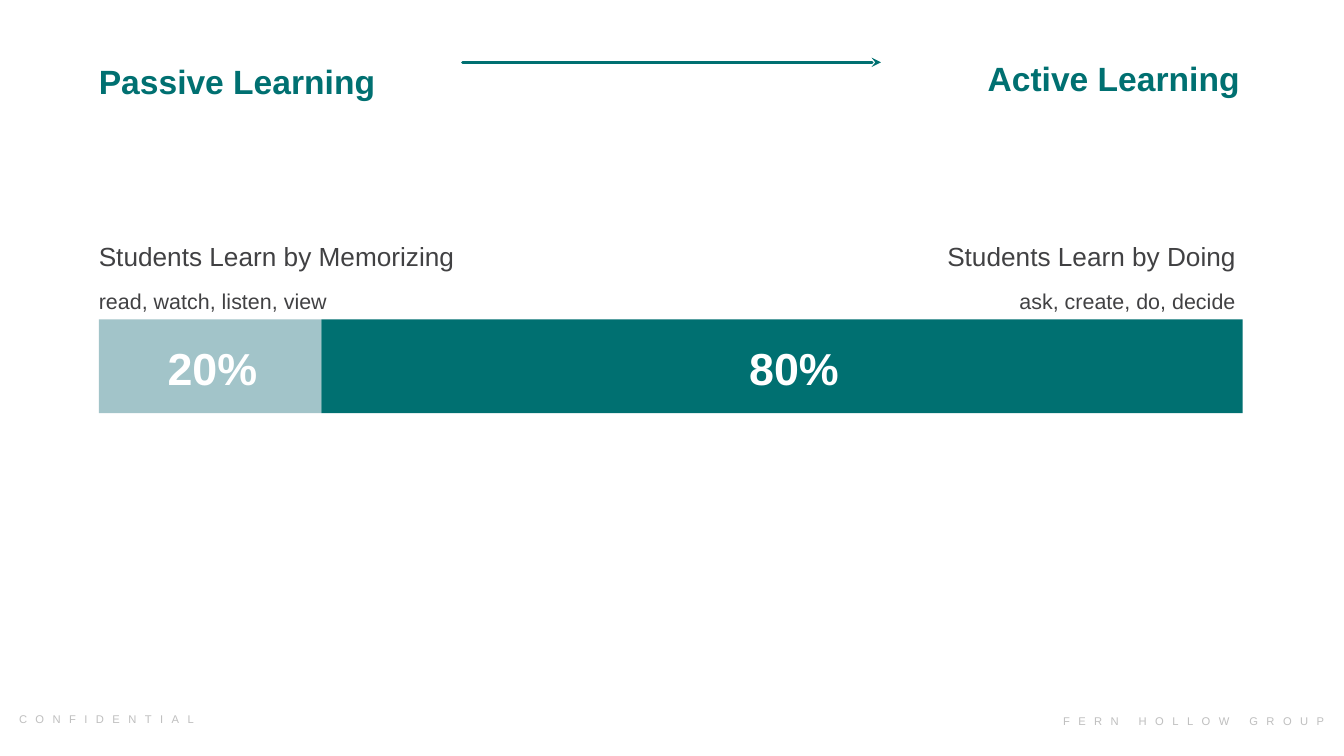
from lxml import etree
from pptx import Presentation
from pptx.dml.color import RGBColor
from pptx.enum.shapes import MSO_CONNECTOR, MSO_SHAPE
from pptx.enum.text import MSO_ANCHOR, PP_ALIGN
from pptx.oxml.ns import qn
from pptx.util import Cm, Pt

LEFT, CENTER, RIGHT = PP_ALIGN.LEFT, PP_ALIGN.CENTER, PP_ALIGN.RIGHT
TOP = MSO_ANCHOR.TOP
RECTANGLE = MSO_SHAPE.RECTANGLE
STRAIGHT = MSO_CONNECTOR.STRAIGHT

TEAL, PALE_TEAL = "007071", "A2C4C9"
INK, WHITE, GREY = "414143", "FFFFFF", "BFBFBF"
FONT = "Arial"
TITLE_ONLY = 5


def color(hex_code):
    return RGBColor.from_string(hex_code)


def place(shape, left, top, width, height):
    shape.left, shape.top = Cm(left), Cm(top)
    shape.width, shape.height = Cm(width), Cm(height)


def write(page, text, left, top, width, height, size, ink, bold=False,
          align=LEFT, spacing=1.0, tracking=0, inset=(0, 0), box=None):
    """Put one line of formatted text in a new box or a given placeholder."""
    if box is None:
        box = page.shapes.add_textbox(0, 0, 0, 0)
    place(box, left, top, width, height)
    frame = box.text_frame
    frame.word_wrap = True
    frame.vertical_anchor = TOP
    frame.margin_left = frame.margin_right = Cm(inset[0])
    frame.margin_top = frame.margin_bottom = Cm(inset[1])
    para = frame.paragraphs[0]
    para.alignment = align
    para.line_spacing = spacing
    para.space_before = Pt(0)
    span = para.add_run()
    span.text = text
    span.font.name, span.font.size = FONT, Pt(size)
    span.font.bold = bold
    span.font.color.rgb = color(ink)
    if tracking:
        span.font._element.set("spc", str(tracking * 100))


def add_arrow(page, left, top, width):
    arrow = page.shapes.add_connector(
        STRAIGHT, Cm(left), Cm(top), Cm(left + width), Cm(top))
    arrow.line.color.rgb = color(TEAL)
    arrow.line.width = Pt(2.25)
    line = arrow.line._get_or_add_ln()
    line.set("cap", "rnd")
    etree.SubElement(line, qn("a:tailEnd"), type="stealth")
    etree.SubElement(arrow._element.spPr, qn("a:effectLst"))


def add_headings(page, left, top, width):
    style = dict(size=24, ink=TEAL, bold=True, spacing=1.68)
    write(page, "Passive Learning", left, top + 0.08, 11.66, 1.73,
          box=page.shapes.title, **style)
    write(page, "Active Learning", left + width - 11.56, top, 11.56, 1.73,
          align=RIGHT, **style)
    add_arrow(page, left + 9.17, top + 0.81, 10.54)


def add_captions(page, left, top, width):
    rows = [
        ("Students Learn by Memorizing", "Students Learn by Doing", 0, 1.35, 18.7),
        ("read, watch, listen, view", "ask, create, do, decide", 1.3, 1.09, 15.3),
    ]
    half = width / 2
    for passive, active, offset, height, size in rows:
        for text, start, align in ((passive, left, LEFT),
                                   (active, left + half, RIGHT)):
            write(page, text, start, top + offset, half, height, size, INK,
                  align=align, spacing=1.68)


def add_share_bar(page, left, top, height):
    # Each segment: label, width, fill, label offset from the segment's centre
    segments = [("20%", 5.61, PALE_TEAL, 0.06), ("80%", 23.22, TEAL, 0.3)]
    label_width = 3
    for label, width, fill, shift in segments:
        segment = page.shapes.add_shape(RECTANGLE, 0, 0, 0, 0)
        place(segment, left, top, width, height)
        segment.shadow.inherit = False
        segment.fill.solid()
        segment.fill.fore_color.rgb = color(fill)
        segment.line.fill.background()
        write(page, label, left + (width - label_width) / 2 + shift,
              top + 1.07, label_width, 0.76, 32, WHITE, bold=True,
              align=CENTER, spacing=0.56)
        left += width


def add_footer(page, left, top, width):
    style = dict(size=8, ink=GREY, tracking=6, inset=(0.25, 0.13))
    write(page, "CONFIDENTIAL", left, top, 8.84, 0.61, **style)
    write(page, "FERN HOLLOW GROUP", left + width - 8.84, top + 0.03,
          8.84, 0.61, align=RIGHT, **style)


def main():
    deck = Presentation()
    deck.slide_width, deck.slide_height = Cm(33.87), Cm(19.05)
    page = deck.slides.add_slide(deck.slide_layouts[TITLE_ONLY])
    add_footer(page, 0.23, 17.83, 33.4)
    add_share_bar(page, 2.49, 8.05, 2.36)
    add_captions(page, 2.49, 5.51, 28.65)
    add_headings(page, 2.49, 0.76, 28.75)
    deck.save("out.pptx")


if __name__ == "__main__":
    main()
